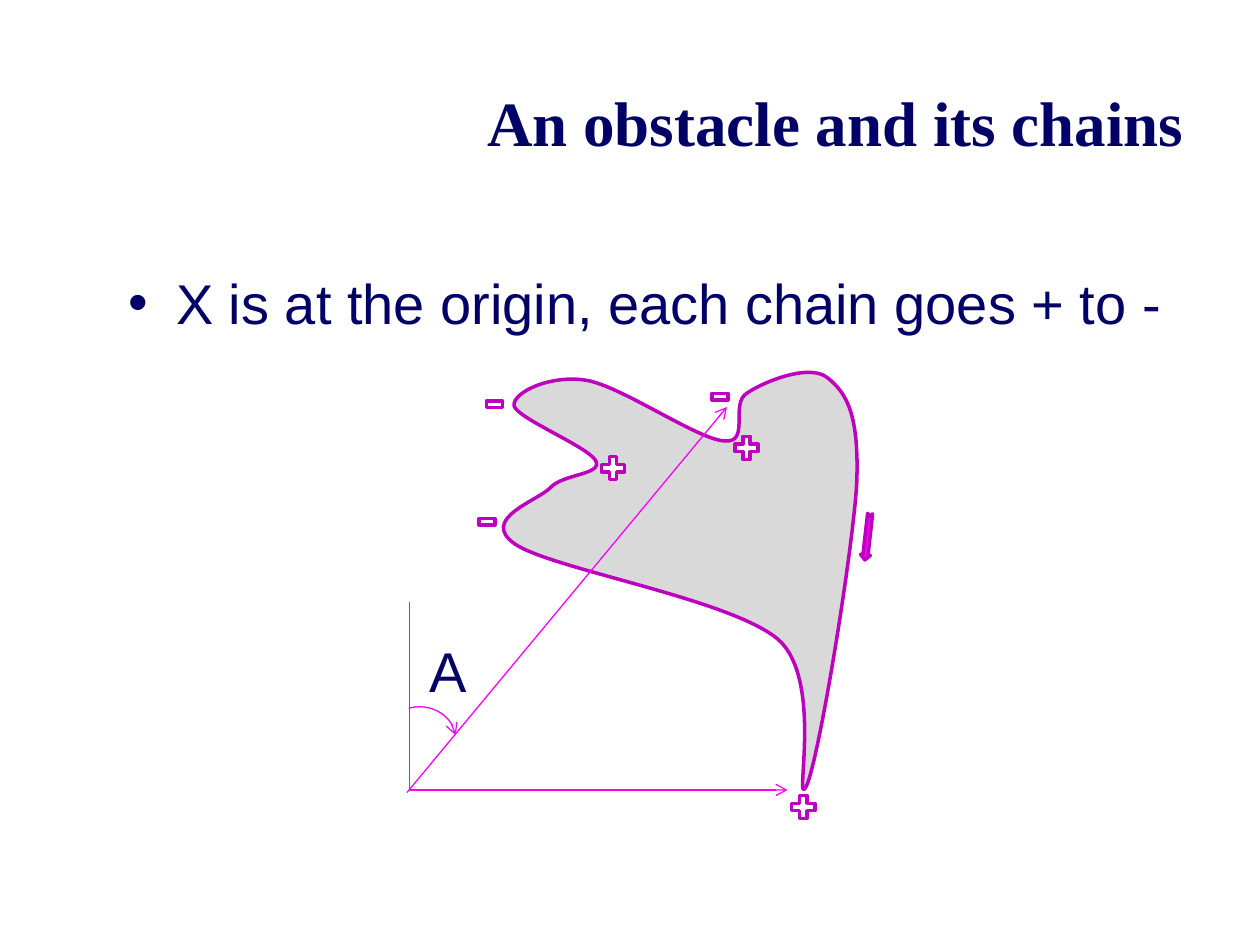
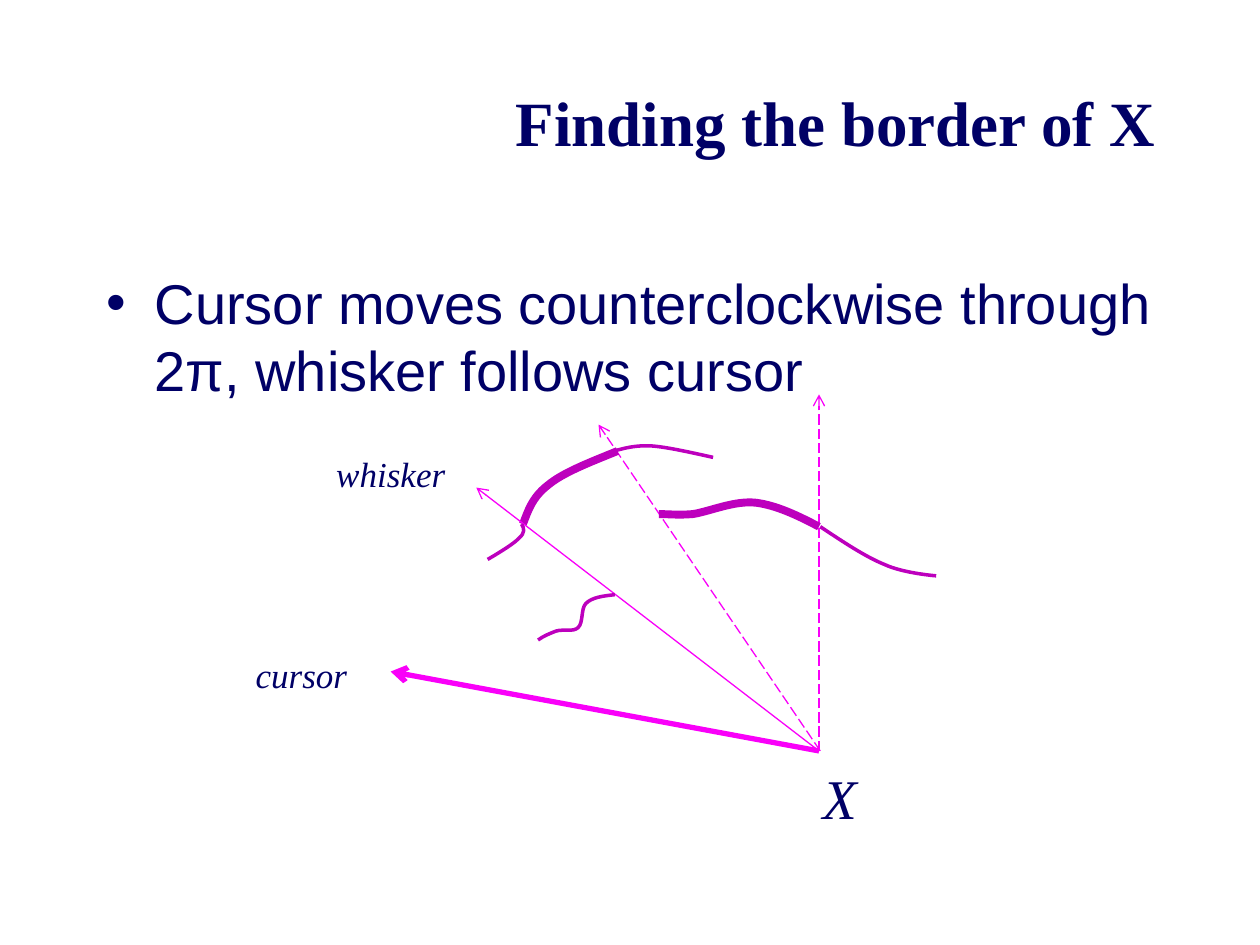
"""Build two slides on obstacle chains and on finding the border of X."""
from dataclasses import dataclass

from lxml import etree
from pptx import Presentation
from pptx.dml.color import RGBColor
from pptx.enum.dml import MSO_LINE
from pptx.enum.shapes import MSO_CONNECTOR, MSO_SHAPE
from pptx.enum.text import MSO_ANCHOR, PP_ALIGN
from pptx.oxml.ns import qn
from pptx.shapes.base import BaseShape
from pptx.shapes.shapetree import _BaseGroupShapes
from pptx.slide import Slide
from pptx.text.text import _Paragraph
from pptx.util import Inches, Pt

ARC = MSO_SHAPE.ARC
PLUS = MSO_SHAPE.MATH_PLUS
MINUS = MSO_SHAPE.MATH_MINUS
NOTCHED_ARROW = MSO_SHAPE.NOTCHED_RIGHT_ARROW
STRAIGHT = MSO_CONNECTOR.STRAIGHT
LONG_DASH = MSO_LINE.LONG_DASH
TOP, BOTTOM = MSO_ANCHOR.TOP, MSO_ANCHOR.BOTTOM
LEFT, CENTER = PP_ALIGN.LEFT, PP_ALIGN.CENTER

Point = tuple[float, float]
Box = tuple[float, float, float, float]


@dataclass(frozen=True)
class Theme:
    """Colours, fonts, type sizes and line widths of both slides."""

    ink: str = "000066"
    ray: str = "F900F9"
    chain: str = "BD00BD"
    obstacle: str = "D9D9D9"
    sign: str = "FFFFFF"
    direction: str = "FF00FF"
    sans: str = "Arial"
    serif: str = "Times New Roman"
    title_size: float = 36
    body_size: float = 32
    label_size: float = 20
    thin: float = 0.75
    medium: float = 2
    cursor: float = 3
    border: float = 4.5


THEME = Theme()


@dataclass(frozen=True)
class Ray:
    """A straight line from start to end."""

    start: Point
    end: Point
    width: float = THEME.thin
    dashed: bool = False
    arrow: bool = True


@dataclass(frozen=True)
class Chain:
    """A run of cubic curves: one start point, then three points a curve."""

    points: tuple[Point, ...]
    width: float = THEME.medium
    fill: str | None = None


@dataclass(frozen=True)
class Label:
    """A short text in a box."""

    text: str
    box: Box
    size: float = THEME.label_size
    font: str = THEME.serif
    bold: bool = False
    italic: bool = False
    align: PP_ALIGN = LEFT
    anchor: MSO_ANCHOR = TOP


OBSTACLE = Chain((
    (4.37, 3.87), (4.47, 3.76), (4.78, 3.77), (4.73, 3.66),
    (4.68, 3.55), (4.1, 3.32), (4.08, 3.22),
    (4.07, 3.11), (4.38, 2.97), (4.66, 3.02),
    (4.94, 3.07), (5.54, 3.49), (5.75, 3.5),
    (5.96, 3.52), (5.79, 3.2), (5.93, 3.12),
    (6.06, 3.03), (6.43, 2.88), (6.57, 3),
    (6.72, 3.12), (6.82, 3.29), (6.8, 3.83),
    (6.77, 4.37), (6.5, 6.03), (6.4, 6.24),
    (6.29, 6.45), (6.55, 5.39), (6.17, 5.07),
    (5.78, 4.75), (4.39, 4.52), (4.09, 4.32),
    (3.8, 4.12), (4.26, 3.98), (4.37, 3.87),
), fill=THEME.obstacle)
PLUS_CORNERS = ((5.8, 3.43), (6.25, 6.28), (4.74, 3.59))
MINUS_CORNERS = ((3.84, 3.1), (5.63, 3.04), (3.78, 4.03))

X_POINT = (6.5, 5.96)
BORDER_PARTS = (
    Ray(X_POINT, (6.5, 3.13), dashed=True),
    Chain(((6.51, 4.18), (6.69, 4.3), (6.87, 4.42), (7.02, 4.48),
           (7.17, 4.55), (7.43, 4.57), (7.43, 4.57))),
    Ray((6.51, 5.96), (4.75, 3.37), dashed=True),
    Chain(((5.66, 3.63), (5.48, 3.59), (5.3, 3.55), (5.18, 3.54),
           (5.05, 3.53), (4.95, 3.56), (4.91, 3.57),
           (4.86, 3.58), (4.88, 3.58), (4.9, 3.58))),
    Chain(((4.9, 3.58), (4.68, 3.67), (4.47, 3.75), (4.35, 3.85),
           (4.22, 3.95), (4.19, 4.06), (4.15, 4.16)), THEME.border),
    Ray(X_POINT, (3.78, 3.87)),
    Chain(((4.88, 4.72), (4.79, 4.73), (4.7, 4.74), (4.65, 4.79),
           (4.61, 4.83), (4.63, 4.94), (4.59, 4.98),
           (4.55, 5.02), (4.47, 4.99), (4.41, 5.01),
           (4.36, 5.03), (4.31, 5.05), (4.27, 5.08))),
    Ray(X_POINT, (3.1, 5.33), THEME.cursor),
    Label("whisker", (2.57, 3.54, 1.21, 0.41), italic=True),
    Label("cursor", (1.93, 5.14, 1.12, 0.41), italic=True),
    Chain(((4.14, 4.16), (4.16, 4.19), (4.17, 4.23), (4.12, 4.27),
           (4.08, 4.32), (3.87, 4.44), (3.87, 4.44))),
    Label("X", (6.43, 6.01, 0.49, 0.38), THEME.body_size, italic=True),
    Chain(((6.5, 4.18), (6.33, 4.09), (6.16, 4.01), (6, 3.99),
           (5.83, 3.97), (5.63, 4.06), (5.5, 4.08),
           (5.38, 4.09), (5.31, 4.08), (5.23, 4.08)), THEME.border),
)


def style_line(shape: BaseShape, color: str, width: float, arrow: bool = False) -> None:
    """Colour the outline, round its joins and add an arrowhead if asked."""
    shape.line.color.rgb = RGBColor.from_string(color)
    shape.line.width = Pt(width)
    outline = shape._element.spPr.find(qn("a:ln"))
    etree.SubElement(outline, qn("a:round"))
    if arrow:
        etree.SubElement(outline, qn("a:tailEnd"), type="arrow")


def style_fill(shape: BaseShape, color: str | None) -> None:
    """Remove the shadow and fill the shape, or leave it hollow."""
    shape.shadow.inherit = False
    if color is None:
        shape.fill.background()
    else:
        shape.fill.solid()
        shape.fill.fore_color.rgb = RGBColor.from_string(color)


def draw_ray(canvas: _BaseGroupShapes, ray: Ray) -> None:
    """Draw a straight line."""
    line = canvas.add_connector(STRAIGHT, *map(Inches, ray.start + ray.end))
    if ray.dashed:
        line.line.dash_style = LONG_DASH
    style_line(line, THEME.ray, ray.width, ray.arrow)
    etree.SubElement(line._element.spPr, qn("a:effectLst"))


def trace_curves(points: tuple[Point, ...], steps: int = 16) -> list[Point]:
    """Return points along a run of cubic curves, after its start."""
    traced = []
    for first in range(0, len(points) - 1, 3):
        controls = points[first:first + 4]
        for step in range(1, steps + 1):
            t = step / steps
            weights = ((1 - t) ** 3, 3 * t * (1 - t) ** 2, 3 * t * t * (1 - t), t ** 3)
            x, y = (sum(w * p[axis] for w, p in zip(weights, controls)) for axis in (0, 1))
            traced.append((Inches(x), Inches(y)))
    return traced


def bend_outline(curve: BaseShape, chain: Chain) -> None:
    """Replace the straight segments of a traced shape by its cubic curves."""
    outline = next(curve._element.iter(qn("a:path")))
    for segment in list(outline):
        outline.remove(segment)
    starts = range(1, len(chain.points), 3)
    moves = [("a:moveTo", chain.points[:1])]
    moves += [("a:cubicBezTo", chain.points[i:i + 3]) for i in starts]
    for tag, points in moves:
        move = etree.SubElement(outline, qn(tag))
        for x, y in points:
            etree.SubElement(move, qn("a:pt"), x=str(Inches(x) - curve.left),
                             y=str(Inches(y) - curve.top))
    if chain.fill is not None:
        etree.SubElement(outline, qn("a:close"))


def draw_chain(canvas: _BaseGroupShapes, chain: Chain) -> None:
    """Draw a curved outline, closed when it has a fill."""
    builder = canvas.build_freeform(*map(Inches, chain.points[0]))
    builder.add_line_segments(trace_curves(chain.points), close=False)
    curve = builder.convert_to_shape()
    bend_outline(curve, chain)
    style_fill(curve, chain.fill)
    style_line(curve, THEME.chain, chain.width)


def draw_mark(canvas: _BaseGroupShapes, preset: MSO_SHAPE, box: Box, fill: str) -> BaseShape:
    """Draw a filled preset shape with the outline of a chain."""
    mark = canvas.add_shape(preset, *map(Inches, box))
    style_fill(mark, fill)
    style_line(mark, THEME.chain, THEME.medium)
    return mark


def draw_label(canvas: _BaseGroupShapes, label: Label) -> _Paragraph:
    """Write a text and return its paragraph."""
    frame = canvas.add_textbox(*map(Inches, label.box)).text_frame
    frame.word_wrap = True
    frame.vertical_anchor = label.anchor
    frame.text = label.text
    paragraph = frame.paragraphs[0]
    paragraph.alignment = label.align
    for run in paragraph.runs:
        run.font.name = label.font
        run.font.size = Pt(label.size)
        run.font.bold = label.bold
        run.font.italic = label.italic
        run.font.color.rgb = RGBColor.from_string(THEME.ink)
    return paragraph


def add_bullet(paragraph: _Paragraph) -> None:
    """Give a paragraph a hanging bullet."""
    properties = paragraph._p.get_or_add_pPr()
    properties.set("marL", str(Inches(0.38)))
    properties.set("indent", str(-Inches(0.38)))
    color = etree.SubElement(properties, qn("a:buClr"))
    etree.SubElement(color, qn("a:srgbClr"), val=THEME.ink)
    etree.SubElement(properties, qn("a:buFont"), typeface=THEME.sans)
    etree.SubElement(properties, qn("a:buChar"), char="•")


def add_titled_slide(deck: Presentation, title: str, statement: str, left: float) -> Slide:
    """Add a slide with a title and one bulleted statement."""
    slide = deck.slides.add_slide(deck.slide_layouts[6])
    draw_label(slide.shapes, Label(title, (3.67, 0.23, 5.92, 1.08), THEME.title_size,
                                   bold=True, align=CENTER, anchor=BOTTOM))
    add_bullet(draw_label(slide.shapes, Label(statement, (left, 2.08, 8.5, 4.5),
                                              THEME.body_size, THEME.sans)))
    return slide


def build_obstacle_slide(deck: Presentation) -> None:
    """Show an obstacle whose border splits into signed chains."""
    canvas = add_titled_slide(deck, "An obstacle and its chains",
                              "X is at the origin, each chain goes + to -", 0.92).shapes
    origin = (3.25, 6.27)
    draw_ray(canvas, Ray(origin, (6.25, 6.27)))
    draw_chain(canvas, OBSTACLE)
    draw_ray(canvas, Ray(origin, (3.25, 4.78), arrow=False))
    angle = canvas.add_shape(ARC, *map(Inches, (3.04, 5.61, 0.58, 0.53)))
    angle.adjustments[0], angle.adjustments[1] = 150.66, 211.29
    style_fill(angle, None)
    style_line(angle, THEME.ray, THEME.thin, arrow=True)
    for corner in PLUS_CORNERS:
        draw_mark(canvas, PLUS, (*corner, 0.25, 0.25), THEME.sign)
    for corner in MINUS_CORNERS:
        draw_mark(canvas, MINUS, (*corner, 0.17, 0.22), THEME.sign)
    direction = draw_mark(canvas, NOTCHED_ARROW, (6.7, 4.22, 0.37, 0.08), THEME.direction)
    direction.rotation = 96.4
    draw_ray(canvas, Ray((3.23, 6.29), (5.77, 3.23)))
    draw_label(canvas, Label("A", (3.31, 5, 0.33, 0.64), THEME.body_size, THEME.sans))


def build_border_slide(deck: Presentation) -> None:
    """Show the cursor and whisker sweeping around X."""
    slide = add_titled_slide(deck, "Finding the border of X",
                             "Cursor moves counterclockwise through 2π, whisker follows cursor",
                             0.75)
    canvas = slide.shapes.add_group_shape().shapes
    draw_part = {Ray: draw_ray, Chain: draw_chain, Label: draw_label}
    for part in BORDER_PARTS:
        draw_part[type(part)](canvas, part)


def main() -> None:
    """Build and save the deck."""
    deck = Presentation()
    deck.slide_width, deck.slide_height = Inches(10), Inches(7.5)
    build_obstacle_slide(deck)
    build_border_slide(deck)
    deck.save("out.pptx")


if __name__ == "__main__":
    main()
